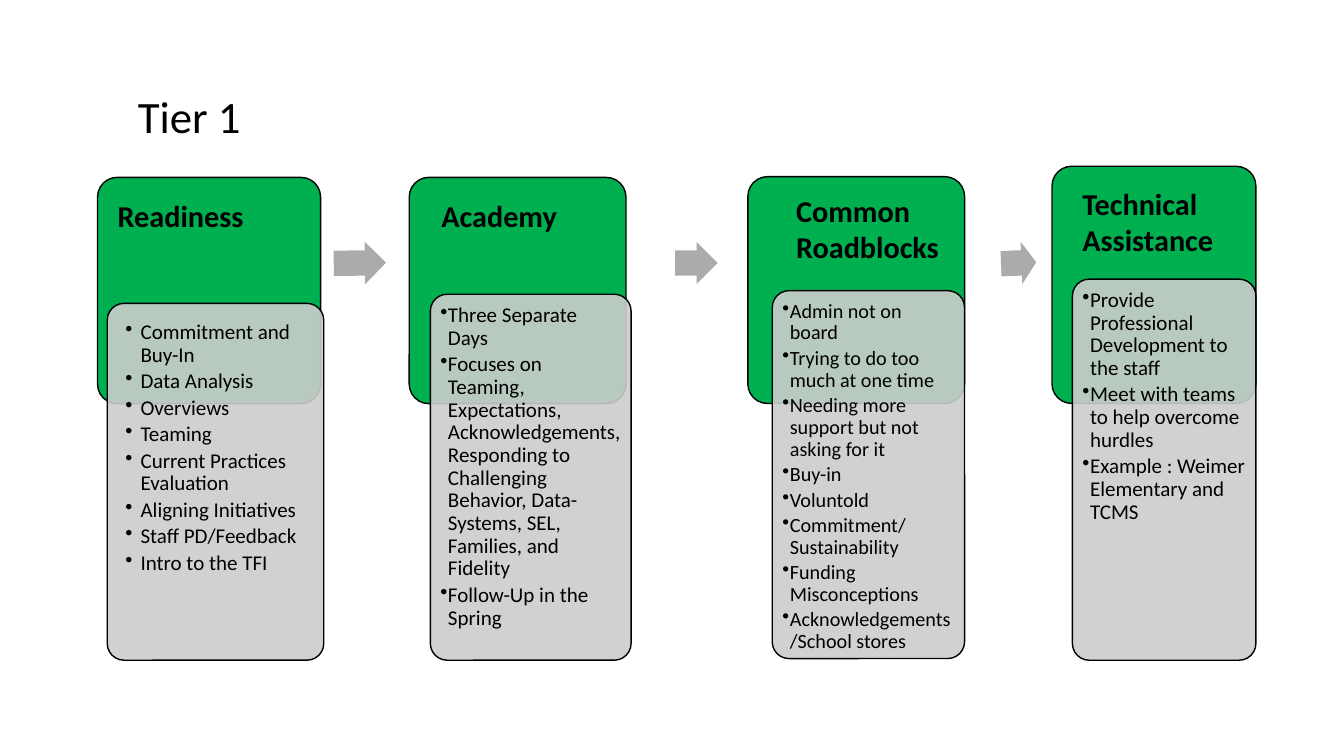
from typing import NamedTuple

from lxml import etree
from pptx import Presentation
from pptx.dml.color import RGBColor
from pptx.enum.shapes import MSO_SHAPE
from pptx.enum.text import MSO_ANCHOR, PP_ALIGN
from pptx.oxml.ns import qn
from pptx.util import Pt

ROUND, ARROW = MSO_SHAPE.ROUNDED_RECTANGLE, MSO_SHAPE.RIGHT_ARROW
TOP, MIDDLE, LEFT = MSO_ANCHOR.TOP, MSO_ANCHOR.MIDDLE, PP_ALIGN.LEFT

FONT = "Calibri"
COLORS = {"green": "00B050", "gray": "CCCCCC", "arrow": "ABABAB", "black": "000000"}
BIG, SMALL = 14, 12  # corner radii
INSET = 0.29  # share of the radius by which a rounded box insets its text


class Box(NamedTuple):
    left: float
    top: float
    width: float
    height: float


class Stage(NamedTuple):
    title: str
    label: Box
    back: Box
    card: Box
    items: list[str]
    size: float = 15
    pad: float = 7.2
    hang: float = 5.4


class Step(NamedTuple):
    box: Box
    turn: float
    head: float


STAGES = [
    Stage("Readiness", Box(77, 137.5, 137.5, 33.1),
          Box(69.7, 126.7, 159.3, 161.6), Box(76.6, 216.7, 154.7, 254.9),
          ["Commitment and Buy-In", "Data Analysis", "Overviews", "Teaming",
           "Current Practices Evaluation", "Aligning Initiatives",
           "Staff PD/Feedback", "Intro to the TFI"], pad=13, hang=10.8),
    Stage("Academy", Box(308.2, 137.5, 122.4, 33.1),
          Box(292.3, 126.7, 154.8, 161.6), Box(307.4, 210.2, 143.4, 261.4),
          ["Three Separate Days",
           "Focuses on Teaming, Expectations, Acknowledgements, Responding to "
           "Challenging Behavior, Data- Systems, SEL, Families, and Fidelity",
           "Follow-Up in the Spring"]),
    Stage("Common Roadblocks", Box(561.6, 133.9, 131, 59.8),
          Box(534.2, 126.2, 154.8, 162), Box(551.6, 207.6, 137.4, 262.8),
          ["Admin not on board", "Trying to do too much at one time",
           "Needing more support but not asking for it", "Buy-in", "Voluntold",
           "Commitment/Sustainability", "Funding Misconceptions",
           "Acknowledgements/School stores"], size=14.4),
    Stage("Technical Assistance", Box(766.1, 128.9, 124.6, 59.8),
          Box(751.5, 118.8, 145.6, 169.4), Box(766, 199.4, 131.1, 272.2),
          ["Provide Professional Development to the staff",
           "Meet with teams to help overcome hurdles",
           "Example : Weimer Elementary and TCMS"]),
]

STEPS = [
    Step(Box(238.4, 172.8, 37.4, 30.2), -0.9, 0.5),
    Step(Box(482.3, 172.8, 30.4, 30.2), 0, 0.5),
    Step(Box(715, 172.8, 25.2, 30.2), -2.3, 0.42),
]


def color(name: str) -> RGBColor:
    return RGBColor.from_string(COLORS[name])


def style(par, size: float, bold: bool = False) -> None:
    par.alignment = LEFT
    for run in par.runs:
        run.font.name = FONT
        run.font.size = Pt(size)
        run.font.bold = bold
        run.font.color.rgb = color("black")


def add_label(slide, text: str, box: Box, size: float, bold=False, anchor=TOP):
    frame = slide.shapes.add_textbox(*map(Pt, box)).text_frame
    frame.word_wrap = True
    frame.vertical_anchor = anchor
    frame.text = text
    style(frame.paragraphs[0], size, bold)


def add_form(slide, kind, box: Box, fill: str):
    form = slide.shapes.add_shape(kind, *map(Pt, box))
    form.shadow.inherit = False
    form.fill.solid()
    form.fill.fore_color.rgb = color(fill)
    form.line.fill.background()
    return form


def add_panel(slide, box: Box, fill: str, curve: float):
    panel = add_form(slide, ROUND, box, fill)
    panel.adjustments[0] = curve / min(box.width, box.height)
    panel.line.color.rgb = color("black")
    panel.line.width = Pt(1)
    return panel


def add_items(panel, stage: Stage) -> None:
    frame = panel.text_frame
    frame.word_wrap = True
    frame.vertical_anchor = TOP
    pad = Pt(stage.pad - INSET * SMALL)
    frame.margin_left = frame.margin_right = pad
    frame.margin_top = frame.margin_bottom = pad
    frame.text = "\n".join(stage.items)
    for par in frame.paragraphs:
        props = par._p.get_or_add_pPr()
        props.set("marL", str(Pt(stage.hang)))
        props.set("indent", str(-Pt(stage.hang)))
        etree.SubElement(props, qn("a:buChar"), char="•")
        par.line_spacing = 0.9
        par.space_after = Pt(round(0.18 * stage.size, 1))
        style(par, stage.size)


def add_stage(slide, stage: Stage) -> None:
    add_panel(slide, stage.back, "green", BIG)
    card = add_panel(slide, stage.card, "gray", SMALL)
    tint = card.fill._xPr.find(qn("a:solidFill"))[0]
    etree.SubElement(tint, qn("a:alpha"), val="90000")
    add_items(card, stage)
    add_label(slide, stage.title, stage.label, 21.6, bold=True)


def add_step(slide, step: Step) -> None:
    arrow = add_form(slide, ARROW, step.box, "arrow")
    arrow.adjustments[0] = 0.6
    arrow.adjustments[1] = step.head
    arrow.rotation = step.turn


def main() -> None:
    deck = Presentation()
    deck.slide_width, deck.slide_height = Pt(960), Pt(540)
    slide = deck.slides.add_slide(deck.slide_layouts[6])

    # Title
    add_label(slide, "Tier 1", Box(91.4, 37.4, 777.6, 90), 32, anchor=MIDDLE)

    # Stages and the arrows between them
    for stage in STAGES:
        add_stage(slide, stage)
    for step in STEPS:
        add_step(slide, step)

    deck.save("out.pptx")


if __name__ == "__main__":
    main()
